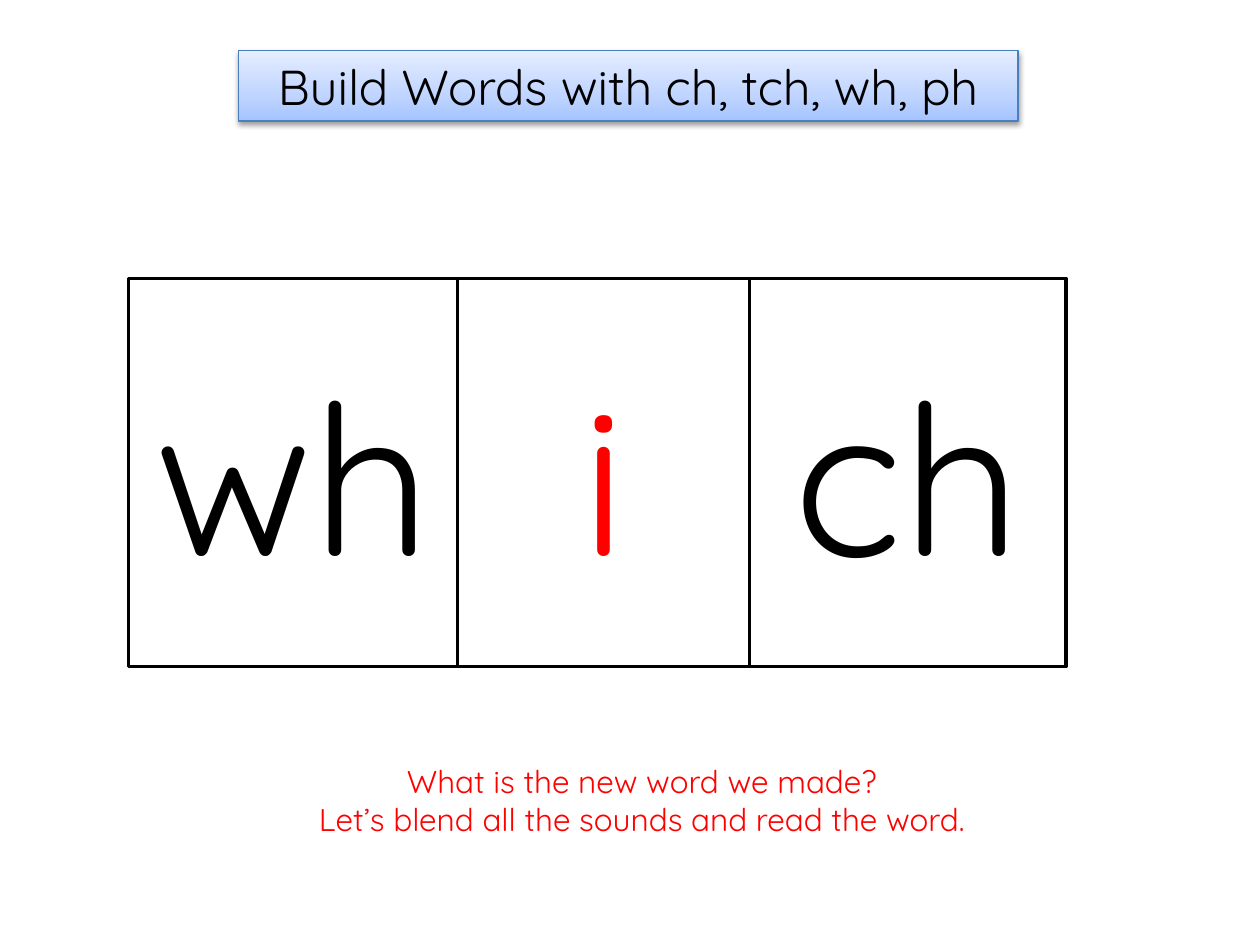
import pptx
import pptx.dml.color
import pptx.enum.shapes
import pptx.enum.text
import pptx.oxml
import pptx.oxml.ns
import pptx.util
from pptx.util import Inches

RGBColor = pptx.dml.color.RGBColor
BLACK = RGBColor(0x00, 0x00, 0x00)
WHITE = RGBColor(0xFF, 0xFF, 0xFF)
RED = RGBColor(0xFF, 0x00, 0x00)
TITLE_LINE = RGBColor(0x4B, 0x7E, 0xBC)
TITLE_STOPS = [
    (0, RGBColor(0xA4, 0xC4, 0xFF)),
    (35, RGBColor(0xBF, 0xD4, 0xFF)),
    (100, RGBColor(0xE6, 0xEE, 0xFF)),
]


class SlideBuilder:
    """Holds the style and the current slide."""

    font = "Quicksand"

    def __init__(self, slide):
        self.slide = slide

    def add_text(self, sp, lines, size, color, anchor):
        tf = sp.text_frame
        tf.word_wrap = True
        tf.vertical_anchor = anchor
        for i, line in enumerate(lines):
            p = tf.add_paragraph() if i else tf.paragraphs[0]
            p.alignment = pptx.enum.text.PP_ALIGN.CENTER
            r = p.add_run()
            r.text = line
            r.font.name = self.font
            r.font.size = pptx.util.Pt(size)
            r.font.color.rgb = color

    def outline(self, sp, color, width):
        sp.line.color.rgb = color
        sp.line.width = pptx.util.Pt(width)

    def title(self, text, left, top, width, height):
        sp = self.slide.shapes.title
        sp.left, sp.top = Inches(left), Inches(top)
        sp.width, sp.height = Inches(width), Inches(height)
        ns = pptx.oxml.ns.nsdecls("a")
        spPr = sp.element.spPr
        # Gradient running from bottom to top
        stops = "".join(
            f'<a:gs pos="{pos * 1000}"><a:srgbClr val="{color}"/></a:gs>'
            for pos, color in TITLE_STOPS
        )
        spPr.append(pptx.oxml.parse_xml(
            f'<a:gradFill {ns} rotWithShape="1"><a:gsLst>{stops}</a:gsLst>'
            '<a:lin ang="16200000" scaled="0"/></a:gradFill>'
        ))
        self.outline(sp, TITLE_LINE, 0.75)
        # Soft shadow below the banner
        blur, dist = pptx.util.Pt(3.1), pptx.util.Pt(1.6)
        spPr.append(pptx.oxml.parse_xml(
            f'<a:effectLst {ns}><a:outerShdw blurRad="{blur}" dist="{dist}" '
            f'dir="5400000" rotWithShape="0"><a:srgbClr val="{BLACK}">'
            '<a:alpha val="38000"/></a:srgbClr></a:outerShdw></a:effectLst>'
        ))
        sp.text_frame.auto_size = pptx.enum.text.MSO_AUTO_SIZE.NONE
        self.add_text(sp, [text], 28, BLACK, pptx.enum.text.MSO_ANCHOR.MIDDLE)

    def sound_box(self, text, color, left, top, width, height):
        sp = self.slide.shapes.add_shape(
            pptx.enum.shapes.MSO_SHAPE.RECTANGLE,
            Inches(left), Inches(top), Inches(width), Inches(height))
        sp.shadow.inherit = False
        sp.fill.solid()
        sp.fill.fore_color.rgb = WHITE
        self.outline(sp, BLACK, 2)
        self.add_text(sp, [text], 120, color, pptx.enum.text.MSO_ANCHOR.MIDDLE)

    def prompt(self, lines, left, top, width, height):
        sp = self.slide.shapes.add_textbox(
            Inches(left), Inches(top), Inches(width), Inches(height))
        self.add_text(sp, lines, 18, RED, pptx.enum.text.MSO_ANCHOR.TOP)
        sp.text_frame.auto_size = pptx.enum.text.MSO_AUTO_SIZE.SHAPE_TO_FIT_TEXT


def main():
    prs = pptx.Presentation()
    prs.slide_width, prs.slide_height = Inches(10), Inches(7.5)
    s = SlideBuilder(prs.slides.add_slide(prs.slide_layouts[5]))

    # Title banner
    s.title("Build Words with ch, tch, wh, ph", 1.89, 0.4, 6.19, 0.56)

    # Sound boxes, side by side
    left = 1.02
    for text, color, width in [("wh", BLACK, 2.61), ("i", RED, 2.32), ("ch", BLACK, 2.51)]:
        s.sound_box(text, color, left, 2.21, width, 3.08)
        left += width

    # Prompt for the class
    s.prompt(["What is the new word we made?",
              "Let’s blend all the sounds and read the word."],
             1.61, 6, 6.97, 0.71)

    prs.save("out.pptx")


if __name__ == "__main__":
    main()
